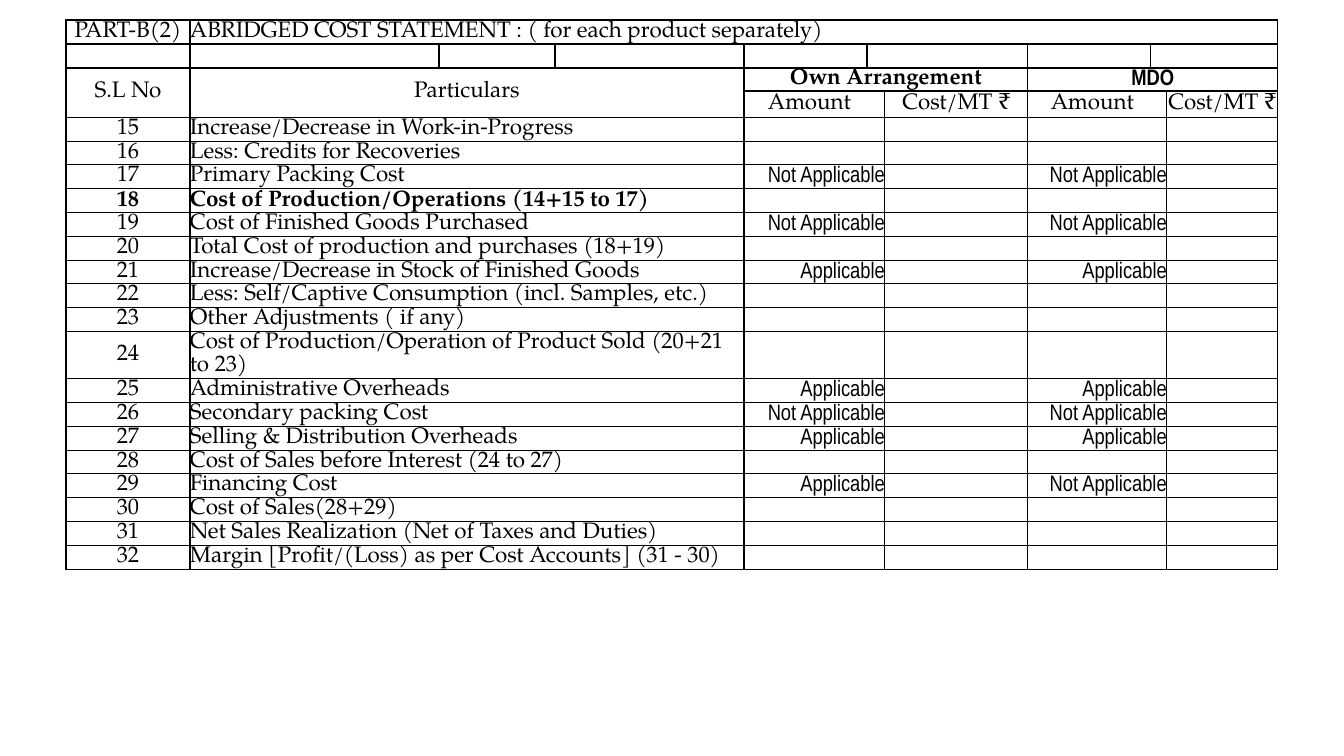
from itertools import pairwise
from lxml.etree import SubElement
from pptx import Presentation
from pptx.dml.color import RGBColor
from pptx.enum.text import MSO_ANCHOR as ANCHOR, PP_ALIGN as ALIGN
from pptx.oxml.ns import qn
from pptx.util import Pt

PX = 914400 / 100.8
SERIF, NARROW = "TeX Gyre Pagella", "Arial Narrow"
BLACK = "000000"
NA, OK = "Not Applicable", "Applicable"
L, C, R = ALIGN.LEFT, ALIGN.CENTER, ALIGN.RIGHT

COL_EDGES = [66, 190, 439, 555, 744, 867, 885, 1028, 1151, 1167, 1278]
ROW_EDGES = [20, 44, 68, 91, 118, 142, 165, 189, 213, 237, 261, 284, 308,
             332, 379, 403, 427, 451, 474, 498, 522, 546, 570]
OWN, MDO = 4, 7
FIRST_ITEM, FIRST_NO, TOTAL_NO = 4, 15, 18

HEADINGS = [
    (0, 0, 1, 1, "PART-B(2)", C, SERIF, False),
    (0, 1, 1, 9, "ABRIDGED COST STATEMENT : ( for each product separately)", L, SERIF, False),
    (1, 5, 1, 2, "", C, SERIF, False),
    (1, 8, 1, 2, "", C, SERIF, False),
    (2, 0, 2, 1, "S.L No", C, SERIF, False),
    (2, 1, 2, 3, "Particulars", C, SERIF, False),
    (2, OWN, 1, 3, "Own Arrangement", C, SERIF, True),
    (2, MDO, 1, 3, "MDO", C, NARROW, True),
]
ITEMS = [
    ("Increase/Decrease in Work-in-Progress", "", ""),
    ("Less: Credits for Recoveries", "", ""),
    ("Primary Packing Cost", NA, NA),
    ("Cost of Production/Operations (14+15 to 17)", "", ""),
    ("Cost of Finished Goods Purchased", NA, NA),
    ("Total Cost of production and purchases (18+19)", "", ""),
    ("Increase/Decrease in Stock of Finished Goods", OK, OK),
    ("Less: Self/Captive Consumption (incl. Samples, etc.)", "", ""),
    ("Other Adjustments ( if any)", "", ""),
    ("Cost of Production/Operation of Product Sold (20+21 to 23)", "", ""),
    ("Administrative Overheads", OK, OK),
    ("Secondary packing Cost", NA, NA),
    ("Selling & Distribution Overheads", OK, OK),
    ("Cost of Sales before Interest (24 to 27)", "", ""),
    ("Financing Cost", OK, NA),
    ("Cost of Sales(28+29)", "", ""),
    ("Net Sales Realization (Net of Taxes and Duties)", "", ""),
    ("Margin [Profit/(Loss) as per Cost Accounts] (31 - 30)", "", ""),
]


def px(n):
    return round(n * PX)


def color(value):
    return RGBColor.from_string(value)


def style_cell(cell):
    for side in ("left", "right", "top", "bottom"):
        setattr(cell, f"margin_{side}", 0)
    cell.vertical_anchor = ANCHOR.MIDDLE
    tcPr = cell._tc.get_or_add_tcPr()
    for edge in ("a:lnL", "a:lnR", "a:lnT", "a:lnB"):
        ln = SubElement(tcPr, qn(edge), w=str(Pt(1)))
        fill = SubElement(ln, qn("a:solidFill"))
        SubElement(fill, qn("a:srgbClr"), val=BLACK)
    cell.fill.background()


def put(table, row, col, rows, cols, text, align, face, bold):
    cell = table.cell(row, col)
    if rows * cols > 1:
        cell.merge(table.cell(row + rows - 1, col + cols - 1))
    if not text:
        return
    p = cell.text_frame.paragraphs[0]
    p.alignment = align
    r = p.add_run()
    r.text = text
    for name, value in {"name": face, "size": Pt(16), "bold": bold}.items():
        setattr(r.font, name, value)
    r.font.color.rgb = color(BLACK)


prs = Presentation()
prs.slide_width, prs.slide_height = px(1344), px(756)
s = prs.slides.add_slide(prs.slide_layouts[6])

left, top = COL_EDGES[0], ROW_EDGES[0]
frame = s.shapes.add_table(len(ROW_EDGES) - 1, len(COL_EDGES) - 1, px(left), px(top),
                           px(COL_EDGES[-1] - left), px(ROW_EDGES[-1] - top))
table = frame.table
table.first_row = table.horz_banding = False
for column, (a, b) in zip(table.columns, pairwise(COL_EDGES)):
    column.width = px(b - a)
for row, (a, b) in zip(table.rows, pairwise(ROW_EDGES)):
    row.height = px(b - a)
for cell in table.iter_cells():
    style_cell(cell)

for heading in HEADINGS:
    put(table, *heading)
for col in (OWN, MDO):
    put(table, 3, col, 1, 2, "Amount", C, SERIF, False)
    table.cell(3, col).margin_right = px(10)
    put(table, 3, col + 2, 1, 1, "Cost/MT ₹", C, SERIF, False)

for i, (name, own, mdo) in enumerate(ITEMS):
    row, number = FIRST_ITEM + i, FIRST_NO + i
    bold = number == TOTAL_NO
    put(table, row, 0, 1, 1, str(number), C, SERIF, bold)
    put(table, row, 1, 1, 3, name, L, SERIF, bold)
    put(table, row, OWN, 1, 2, own, R, NARROW, False)
    put(table, row, MDO, 1, 2, mdo, R, NARROW, False)

for cell in table.iter_cells():
    if not cell.text:
        p = cell.text_frame.paragraphs[0]
        SubElement(p._p, qn("a:endParaRPr"), sz="1200")

prs.save("out.pptx")
